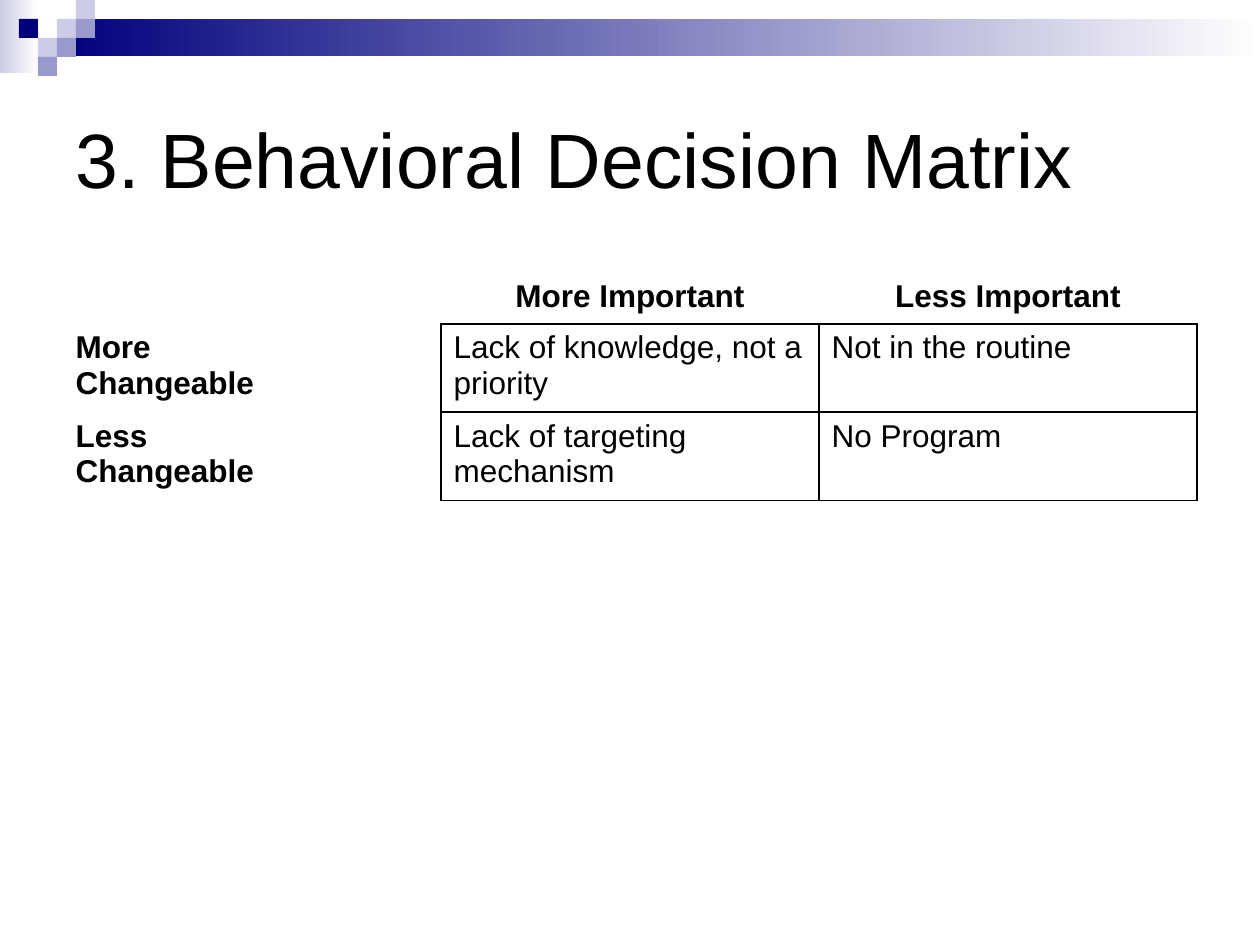
from lxml.etree import SubElement
from pptx import Presentation
from pptx.dml.color import RGBColor
from pptx.enum.shapes import MSO_SHAPE
from pptx.enum.text import MSO_ANCHOR, PP_ALIGN
from pptx.oxml import parse_xml
from pptx.oxml.ns import nsdecls, qn
from pptx.util import Emu, Pt

PIXELS_PER_INCH = 126
NAVY, LILAC, PERIWINKLE = "00007D", "CCCCE6", "9999CC"
BLACK, WHITE = "000000", "FFFFFF"


def px(length):
    return Emu(round(length * 914400 / PIXELS_PER_INCH))


def color(value):
    return RGBColor.from_string(value)


def style_paragraph(paragraph, size, bold=False):
    font = paragraph.font
    font.name, font.size, font.bold = "Arial", Pt(size), bold
    font.color.rgb = color(BLACK)


def add_rectangle(slide, left, top, width, height, start, end=None):
    """Add a borderless rectangle, fading left to right when end is given."""
    shape = slide.shapes.add_shape(
        MSO_SHAPE.RECTANGLE, px(left), px(top), px(width), px(height))
    shape.shadow.inherit = False
    shape.line.fill.background()
    if end is None:
        shape.fill.solid()
        shape.fill.fore_color.rgb = color(start)
        return
    shape.fill.gradient()
    shape.fill.gradient_angle = 0
    for stop, value, position in zip(shape.fill.gradient_stops, (start, end), (0, 1)):
        stop.color.rgb = color(value)
        stop.position = position


def add_banner(slide, left, top, width):
    unit = 19
    add_rectangle(slide, left, top, 2 * unit, 73, LILAC, WHITE)
    add_rectangle(slide, left + 3 * unit, top + unit, width - 3 * unit, 37, NAVY, WHITE)
    squares = [(3, 1, LILAC), (4, 0, LILAC), (4, 1, PERIWINKLE), (2, 2, LILAC),
               (1, 1, NAVY), (3, 2, PERIWINKLE), (2, 3, PERIWINKLE)]
    for column, row, fill in squares:
        add_rectangle(slide, left + column * unit, top + row * unit, unit, unit, fill)


def add_title(slide, left, top, width, height, text):
    frame = slide.shapes.add_textbox(px(left), px(top), px(width), px(height)).text_frame
    frame.word_wrap = True
    frame.vertical_anchor = MSO_ANCHOR.MIDDLE
    frame.text = text
    style_paragraph(frame.paragraphs[0], 44)


def set_borders(cell, **sides):
    """Draw one-point borders; sides are given in the order L, R, T, B."""
    properties = cell._tc.get_or_add_tcPr()
    for index, (side, value) in enumerate(sides.items()):
        line = parse_xml(f'<a:ln{side} {nsdecls("a")} w="{Pt(1)}"/>')
        fill = SubElement(line, qn("a:solidFill"))
        SubElement(fill, qn("a:srgbClr")).set("val", value)
        properties.insert(index, line)


def add_matrix(slide, left, top, width, row_heights, rows):
    """Add a table whose first row and first column are unboxed headings."""
    column_count = len(rows[0])
    table = slide.shapes.add_table(
        len(rows), column_count, px(left), px(top), px(width), px(sum(row_heights))).table
    table.first_row = table.horz_banding = False
    for column in table.columns:
        column.width = px(width / column_count)
    for row, height in zip(table.rows, row_heights):
        row.height = px(height)
    for row, texts in enumerate(rows):
        for column, text in enumerate(texts):
            cell = table.cell(row, column)
            cell.text = text
            cell.fill.background()
            for paragraph in cell.text_frame.paragraphs:
                style_paragraph(paragraph, 18, bold=row == 0 or column == 0)
                paragraph.alignment = PP_ALIGN.CENTER if row == 0 else PP_ALIGN.LEFT
            boxed = row > 0 and column > 0
            set_borders(
                cell,
                L=BLACK if boxed else WHITE,
                R=BLACK if row > 0 else WHITE,
                T=BLACK if boxed else WHITE,
                B=BLACK if column > 0 else WHITE)


def main():
    presentation = Presentation()
    presentation.slide_width, presentation.slide_height = px(1260), px(945)
    slide = presentation.slides.add_slide(presentation.slide_layouts[6])
    add_banner(slide, 0, 0, 1260)
    add_title(slide, 63, 63, 1134, 189, "3. Behavioral Decision Matrix")
    add_matrix(slide, 63, 273, 1134, (51, 83, 83), [
        ("", "More Important", "Less Important"),
        ("More\nChangeable", "Lack of knowledge, not a priority", "Not in the routine"),
        ("Less\nChangeable", "Lack of targeting mechanism", "No Program"),
    ])
    presentation.save("out.pptx")


if __name__ == "__main__":
    main()
